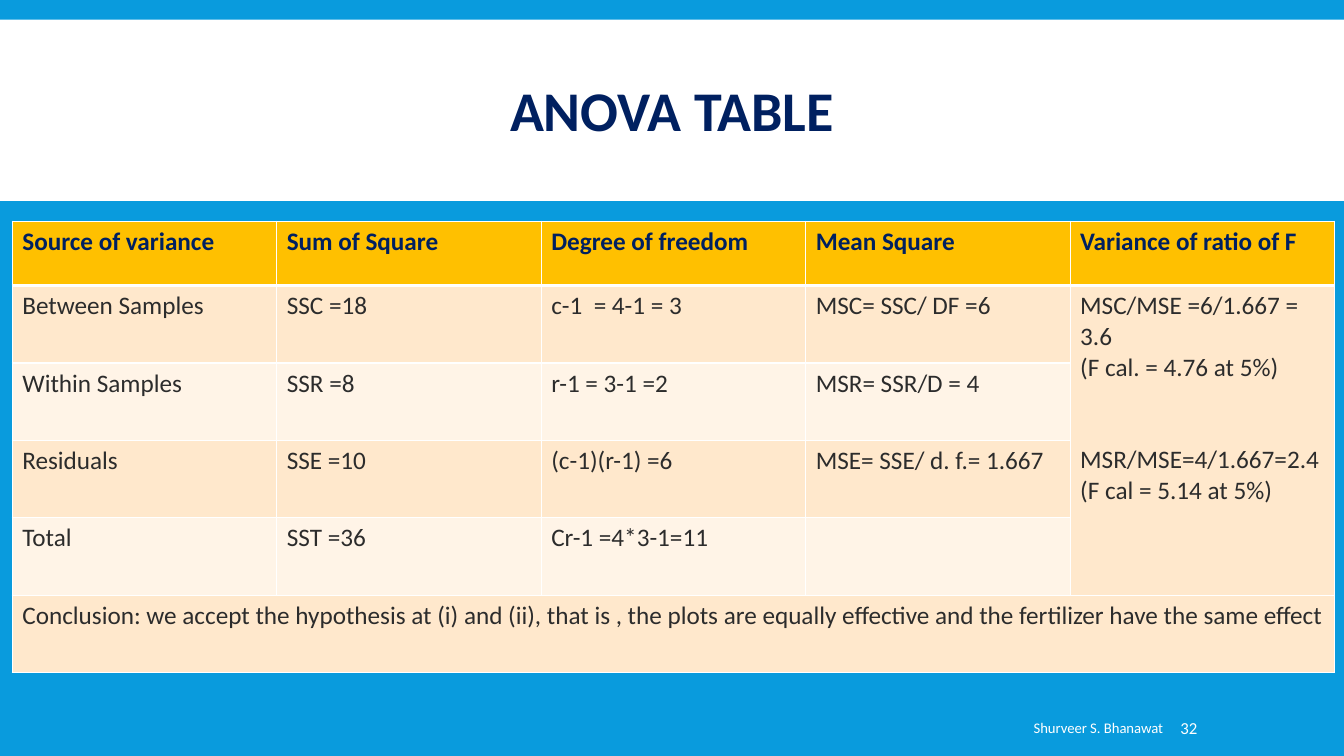
from lxml.etree import SubElement
from pptx import Presentation
from pptx.dml.color import RGBColor
from pptx.enum.shapes import MSO_SHAPE
from pptx.enum.text import MSO_ANCHOR, PP_ALIGN
from pptx.oxml.ns import qn
from pptx.util import Pt

HUES = {
    "sky": "099BDD", "white": "FFFFFF", "navy": "002060", "ink": "2C2C2C",
    "gold": "FFC000", "peach": "FFE8CC", "cream": "FFF4E7",
}
HEAD = ["Source of variance", "Sum of Square", "Degree of freedom",
        "Mean Square", "Variance of ratio of F"]
ROWS = [
    ["Between Samples", "SSC =18", "c-1  = 4-1 = 3", "MSC= SSC/ DF =6"],
    ["Within Samples", "SSR =8", "r-1 = 3-1 =2", "MSR= SSR/D = 4"],
    ["Residuals", "SSE =10", "(c-1)(r-1) =6", "MSE= SSE/ d. f.= 1.667"],
    ["Total", "SST =36", "Cr-1 =4*3-1=11", ""],
    ["Conclusion: we accept the hypothesis at (i) and (ii), that is , the plots "
     "are equally effective and the fertilizer have the same effect"],
]
RATIOS = ["MSC/MSE =6/1.667 = 3.6", "(F cal. = 4.76 at 5%)",
          "MSR/MSE=4/1.667=2.4", "(F cal = 5.14 at 5%)"]
GAP = 44  # two empty 18 pt lines between the two ratios


def hue(name):
    return RGBColor.from_string(HUES[name])


class Deck:
    """Holds the font and the current slide."""

    def __init__(self, font):
        self.font = font
        self.show = Presentation()
        self.show.slide_width, self.show.slide_height = Pt(960), Pt(540)
        self.slide = self.show.slides.add_slide(self.show.slide_layouts[5])
        back = self.slide.background.fill
        back.solid()
        back.fore_color.rgb = hue("sky")

    def add_text(self, para, text, size, color, bold=False):
        run = para.add_run()
        run.text = text
        font = run.font
        font.name, font.size, font.bold = self.font, Pt(size), bold
        font.color.rgb = hue(color)

    def title(self, text, *box):
        head = self.slide.shapes.title
        head.left, head.top, head.width, head.height = map(Pt, box)
        head.text_frame.vertical_anchor = MSO_ANCHOR.MIDDLE
        para = head.text_frame.paragraphs[0]
        para.alignment, para.line_spacing = PP_ALIGN.CENTER, 0.85
        self.add_text(para, text, 40, "navy", True)

    def band(self, color, *box):
        """Add a plain strip behind the title."""
        strip = self.slide.shapes.add_shape(MSO_SHAPE.RECTANGLE, *map(Pt, box))
        strip.shadow.inherit = False
        strip.fill.solid()
        strip.fill.fore_color.rgb = hue(color)
        strip.line.fill.background()
        self.slide.shapes.title.element.addprevious(strip.element)

    def label(self, text, size, align, left, *box):
        note = self.slide.shapes.add_textbox(*map(Pt, box)).text_frame
        note.word_wrap = True
        note.vertical_anchor = MSO_ANCHOR.MIDDLE
        note.margin_left = Pt(left)
        note.paragraphs[0].alignment = align
        self.add_text(note.paragraphs[0], text, size, "white")

    def grid(self, left, top, width, heights, cols):
        frame = self.slide.shapes.add_table(
            len(heights), cols, Pt(left), Pt(top), Pt(width), Pt(sum(heights)))
        table = frame.table
        for col in table.columns:
            col.width = Pt(width / cols)
        for row, high in zip(table.rows, heights):
            row.height = Pt(high)
        return table

    def paint(self, cell, color, upper, lower):
        """Fill a cell and rule it in white; upper and lower are line widths."""
        for tag, wide in (("lnL", 1), ("lnR", 1), ("lnT", upper), ("lnB", lower)):
            line = SubElement(cell._tc.get_or_add_tcPr(), qn("a:" + tag),
                              w=str(Pt(wide)))
            SubElement(SubElement(line, qn("a:solidFill")), qn("a:srgbClr"),
                       val=HUES["white"])
        cell.fill.solid()
        cell.fill.fore_color.rgb = hue(color)

    def fill(self, cell, lines, color, bold=False):
        frame = cell.text_frame
        for i, text in enumerate(lines):
            para = frame.add_paragraph() if i else frame.paragraphs[0]
            self.add_text(para, text, 18, color, bold)

    def save(self):
        self.show.save("out.pptx")


def main():
    deck = Deck("Calibri")
    deck.band("white", 0, 14, 960, 129.6)
    deck.title("ANOVA TABLE", 95, 22.3, 770, 118.8)

    table = deck.grid(8.8, 158, 944.6, [46] + [55.3] * 5, 5)
    for r in range(6):
        color = "gold" if r == 0 else "peach" if r % 2 else "cream"
        for c in range(5):
            tone = "peach" if r and c == 4 else color
            deck.paint(table.cell(r, c), tone, 3 if r == 1 else 1, 1 if r else 3)
    table.cell(1, 4).merge(table.cell(4, 4))
    table.cell(5, 0).merge(table.cell(5, 4))

    for c, text in enumerate(HEAD):
        deck.fill(table.cell(0, c), [text], "navy", True)
    for r, row in enumerate(ROWS, 1):
        for c, text in enumerate(row):
            if text:
                deck.fill(table.cell(r, c), [text], "ink")
    ratio = table.cell(1, 4)
    deck.fill(ratio, RATIOS, "ink")
    ratio.text_frame.paragraphs[2].space_before = Pt(GAP)

    deck.label("Shurveer S. Bhanawat", 10.5, PP_ALIGN.RIGHT, 7.2,
               440.6, 505.4, 397.4, 28.8)
    deck.label("32", 12, PP_ALIGN.LEFT, 3.6, 839.5, 505.4, 74.2, 28.8)
    deck.save()


if __name__ == "__main__":
    main()
